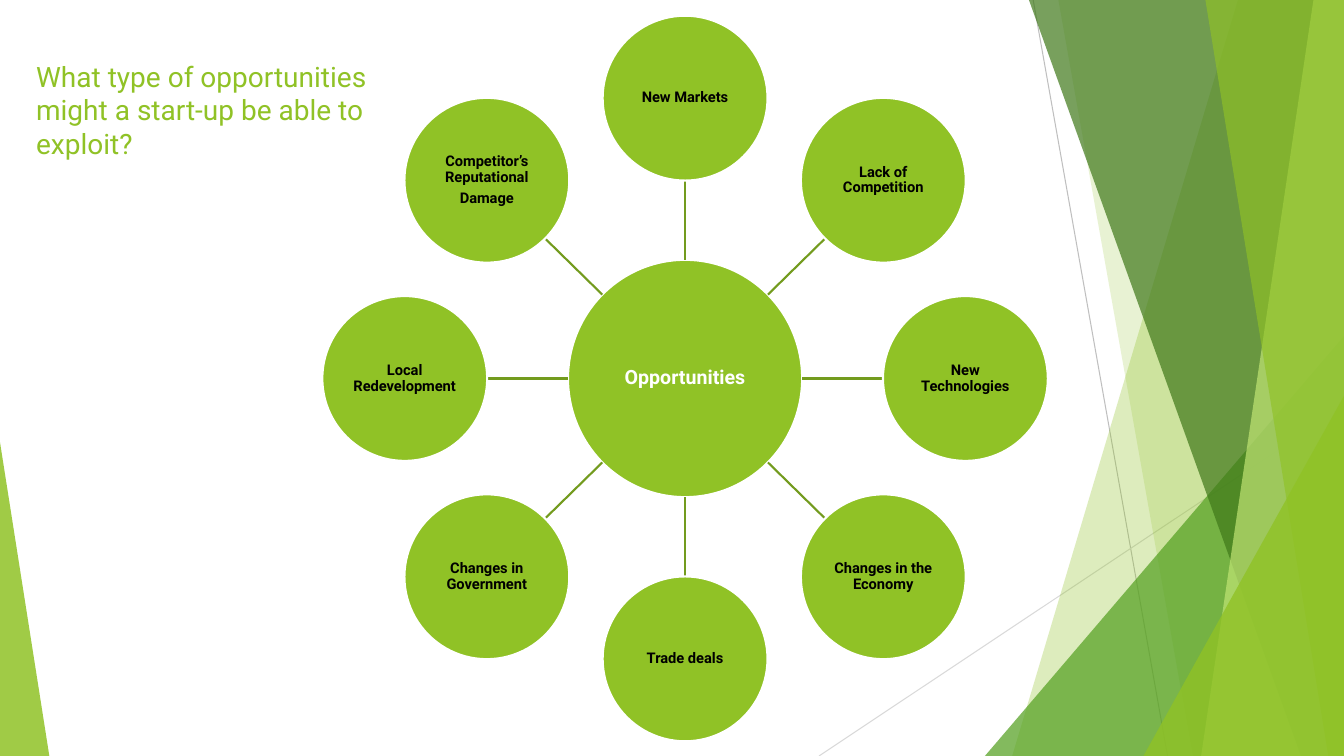
from collections import namedtuple
from math import cos, radians, sin

from lxml import etree
from pptx import Presentation
from pptx.dml.color import RGBColor
from pptx.enum.shapes import MSO_CONNECTOR, MSO_SHAPE
from pptx.enum.text import MSO_ANCHOR, PP_ALIGN
from pptx.oxml.ns import qn
from pptx.util import Pt

EMU_PER_PX = 9525
FONT = "Roboto"
WHITE = RGBColor(0xFF, 0xFF, 0xFF)
BLACK = RGBColor(0x00, 0x00, 0x00)
LIME = RGBColor(0x90, 0xC2, 0x26)
PALE_LIME = RGBColor(0xC0, 0xE4, 0x74)
GREEN = RGBColor(0x54, 0xA0, 0x21)
DARK_GREEN = RGBColor(0x3F, 0x78, 0x19)
SPOKE_GREEN = RGBColor(0x73, 0x9B, 0x1E)
GRAY = RGBColor(0xBF, 0xBF, 0xBF)
LIGHT_GRAY = RGBColor(0xD9, 0xD9, 0xD9)

Box = namedtuple("Box", "left top width height")
SLIDE_BOX = Box(0, 0, 1280, 720)
FACETS_BOX = Box(938, 0, 342, 720)
LEFT_WEDGE_BOX = Box(0, 421, 47, 299)
TITLE_BOX = Box(25, 23, 405, 134)
WHEEL_BOX = Box(307, 15, 691, 691)

HUB_WIDTH, HUB_HEIGHT = 223, 226
NODE_SIZE = 157
NODES = [
    ["New Markets"],
    ["Lack of Competition"],
    ["New Technologies"],
    ["Changes in the Economy"],
    ["Trade deals"],
    ["Changes in Government"],
    ["Local Redevelopment"],
    ["Competitor’s Reputational", "Damage"],
]


def px(length):
    return round(length * EMU_PER_PX)


def add_line(slide, start, end, color, width):
    line = slide.shapes.add_connector(
        MSO_CONNECTOR.STRAIGHT, *map(px, start), *map(px, end))
    line.line.color.rgb = color
    line.line.width = Pt(width)
    etree.SubElement(line._element.spPr, qn("a:effectLst"))


def paint_glass(shape, color, opacity):
    shape.shadow.inherit = False
    shape.fill.solid()
    shape.fill.fore_color.rgb = color
    shape.line.fill.background()
    color_element = shape._element.spPr.find(qn("a:solidFill"))[0]
    etree.SubElement(color_element, qn("a:alpha"), val=str(opacity * 1000))


def add_shard(slide, box, top_x, bottom_x, color, opacity):
    right, bottom = box.left + box.width, box.top + box.height
    builder = slide.shapes.build_freeform(box.left + top_x, box.top, scale=EMU_PER_PX)
    builder.add_line_segments(
        [(right, box.top), (right, bottom), (box.left + bottom_x, bottom)])
    paint_glass(builder.convert_to_shape(), color, opacity)


def add_wedge(slide, box, apex, color, opacity):
    wedge = slide.shapes.add_shape(MSO_SHAPE.ISOSCELES_TRIANGLE, *map(px, box))
    wedge.adjustments[0] = apex
    paint_glass(wedge, color, opacity)


def add_corner_wedge(slide, box, left, top, color, opacity):
    wedge_box = Box(box.left + left, box.top + top, box.width - left, box.height - top)
    add_wedge(slide, wedge_box, 1, color, opacity)


def add_facets(slide, box):
    bottom = box.top + box.height
    add_line(slide, (box.left + 46, box.top), (box.left + 174, bottom), GRAY, 0.75)
    add_line(slide, (box.left + box.width, box.top + 387), (box.left - 158, bottom),
             LIGHT_GRAY, 0.75)
    add_shard(slide, box, 241, 26, LIME, 30)
    add_shard(slide, box, 70, 198, LIME, 20)
    add_corner_wedge(slide, box, 0, 320, GREEN, 72)
    add_shard(slide, box, 42, 301, DARK_GREEN, 70)
    add_shard(slide, box, 313, 206, PALE_LIME, 70)
    add_shard(slide, box, 210, 327, LIME, 65)
    add_corner_wedge(slide, box, 151, 377, LIME, 80)


def add_title(slide, box, text):
    text_frame = slide.shapes.add_textbox(*map(px, box)).text_frame
    text_frame.word_wrap = True
    text_frame.vertical_anchor = MSO_ANCHOR.BOTTOM
    text_frame.text = text
    font = text_frame.paragraphs[0].runs[0].font
    font.name = FONT
    font.size = Pt(20)
    font.color.rgb = LIME


def add_disc(slide, center_x, center_y, width, height, lines, size, color):
    disc = slide.shapes.add_shape(
        MSO_SHAPE.OVAL, px(center_x - width / 2), px(center_y - height / 2),
        px(width), px(height))
    disc.shadow.inherit = False
    disc.fill.solid()
    disc.fill.fore_color.rgb = LIME
    disc.line.color.rgb = WHITE
    disc.line.width = Pt(1.5)
    text_frame = disc.text_frame
    text_frame.word_wrap = True
    text_frame.vertical_anchor = MSO_ANCHOR.MIDDLE
    text_frame.margin_left = text_frame.margin_right = px(1)
    text_frame.margin_top = text_frame.margin_bottom = px(1)
    text_frame.text = "\n".join(lines)
    for paragraph in text_frame.paragraphs:
        paragraph.alignment = PP_ALIGN.CENTER
        paragraph.line_spacing = 0.9
        paragraph.space_after = Pt(size * 0.35)
        font = paragraph.runs[0].font
        font.name = FONT
        font.size = Pt(size)
        font.bold = True
        font.color.rgb = color


def add_wheel(slide, box, hub_text, nodes):
    center_x = box.left + box.width / 2
    center_y = box.top + box.height / 2
    orbit = (box.width - NODE_SIZE) / 2
    reach = orbit - NODE_SIZE / 2
    add_disc(slide, center_x, center_y, HUB_WIDTH, HUB_HEIGHT, [hub_text], 14, WHITE)
    for index, lines in enumerate(nodes):
        angle = radians(index * 360 / len(nodes) - 90)
        across, down = cos(angle), sin(angle)
        add_line(slide,
                 (center_x + across * HUB_WIDTH / 2, center_y + down * HUB_HEIGHT / 2),
                 (center_x + across * reach, center_y + down * reach),
                 SPOKE_GREEN, 1.5)
        add_disc(slide, center_x + across * orbit, center_y + down * orbit,
                 NODE_SIZE, NODE_SIZE, lines, 10.5, BLACK)


def main():
    presentation = Presentation()
    presentation.slide_width = px(SLIDE_BOX.width)
    presentation.slide_height = px(SLIDE_BOX.height)
    slide = presentation.slides.add_slide(presentation.slide_layouts[6])
    add_facets(slide, FACETS_BOX)
    add_wedge(slide, LEFT_WEDGE_BOX, 0, LIME, 85)
    add_title(slide, TITLE_BOX,
              "What type of opportunities might a start-up be able to exploit?")
    add_wheel(slide, WHEEL_BOX, "Opportunities", NODES)
    presentation.save("out.pptx")


if __name__ == "__main__":
    main()
